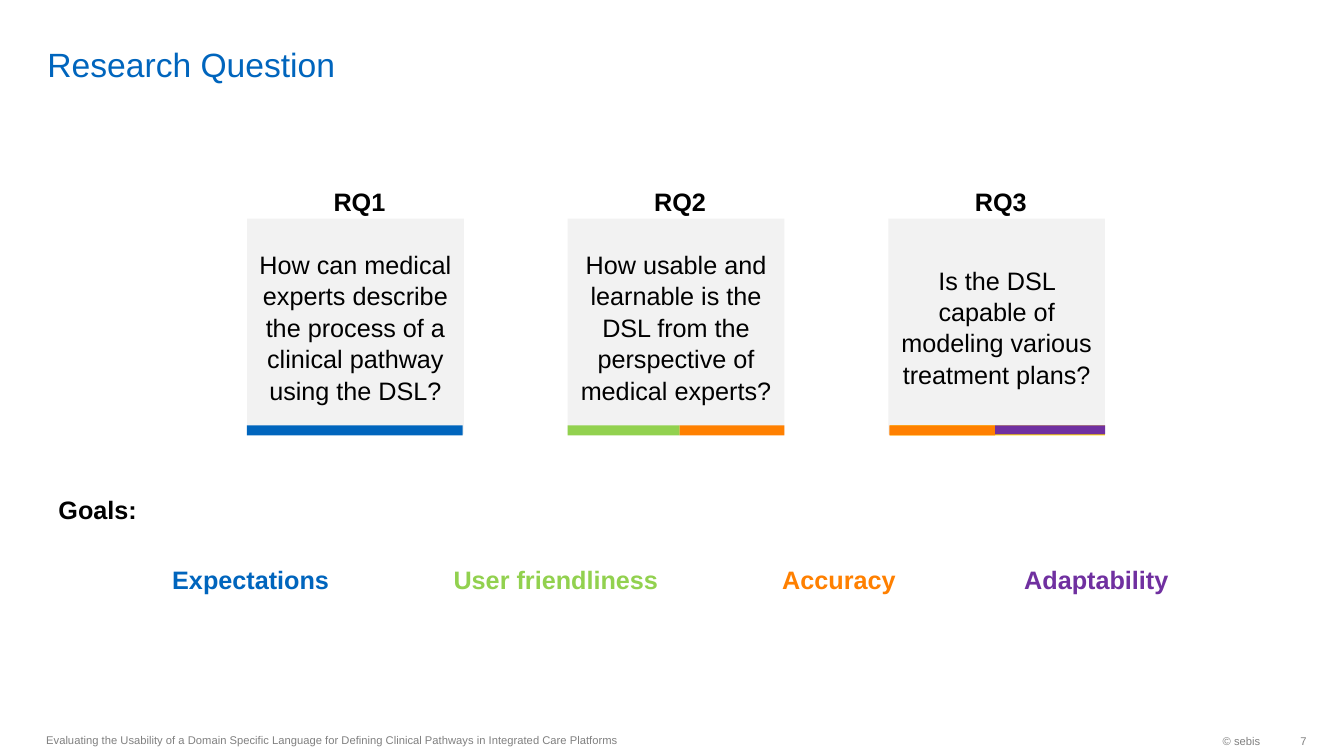
from pptx import Presentation
from pptx import util as u
from pptx.dml.color import RGBColor
from pptx.enum import shapes, text

PX = 9144
COLORS = {
    "blue": "0065BD",
    "green": "92D14F",
    "orange": "FF8000",
    "purple": "7030A0",
    "yellow": "FFDA00",
    "card": "F2F2F2",
    "black": "000000",
    "grey": "808080",
}
LEFT, CENTER, RIGHT = text.PP_ALIGN.LEFT, text.PP_ALIGN.CENTER, text.PP_ALIGN.RIGHT


def write(shape, content, size, color, bold=False, align=LEFT,
          anchor=text.MSO_ANCHOR.MIDDLE, insets=(10, 5, 10, 5), wrap=True):
    frame = shape.text_frame
    frame.word_wrap = wrap
    frame.auto_size = text.MSO_AUTO_SIZE.NONE
    frame.vertical_anchor = anchor
    frame.margin_left, frame.margin_top, frame.margin_right, frame.margin_bottom = [
        inset * PX for inset in insets]
    paragraph = frame.paragraphs[0]
    paragraph.alignment = align
    run = paragraph.add_run()
    run.text = content
    run.font.name = "Arial"
    run.font.size = u.Pt(size)
    run.font.bold = bold
    run.font.color.rgb = RGBColor.from_string(COLORS[color])
    return paragraph


def add_rectangle(left, top, width, height, color):
    shape = slide.shapes.add_shape(
        shapes.MSO_SHAPE.RECTANGLE, left * PX, top * PX, width * PX, height * PX)
    shape.shadow.inherit = False
    shape.fill.solid()
    shape.fill.fore_color.rgb = RGBColor.from_string(COLORS[color])
    shape.line.fill.background()
    return shape


presentation = Presentation()
presentation.slide_width = u.Inches(13.33)
presentation.slide_height = u.Inches(7.5)
slide = presentation.slides.add_slide(presentation.slide_layouts[5])

title = slide.shapes.title
title.left, title.top, title.width, title.height = [
    length * PX for length in (37, 5, 1158, 79)]
write(title, "Research Question", 24, "blue",
      anchor=text.MSO_ANCHOR.BOTTOM, insets=(10, 0, 10, 0))

footers = [
    (36, 718, 630, "Evaluating the Usability of a Domain Specific Language for "
     "Defining Clinical Pathways in Integrated Care Platforms", LEFT, 10),
    (1026, 719, 234, "© sebis", RIGHT, 10),
    (1260, 719, 36, "7", RIGHT, 0),
]
for left, top, width, content, align, right_inset in footers:
    footer = slide.shapes.add_textbox(left * PX, top * PX, width * PX, 32 * PX)
    write(footer, content, 8, "grey", align=align, insets=(10, 5, right_inset, 5))

questions = [
    ("How can medical experts describe the process of a clinical pathway using the DSL?",
     [(245, 214, 10, "blue")]),
    ("How usable and learnable is the DSL from the perspective of medical experts?",
     [(563, 111, 10, "green"), (674, 104, 10, "orange")]),
    ("Is the DSL capable of modeling various treatment plans?",
     [(883, 213, 10, "yellow"), (882, 105, 10, "orange"), (987, 109, 9, "purple")]),
]
for index, (question, goal_bars) in enumerate(questions):
    left = 245 + 318 * index
    card = add_rectangle(left, 217, 215, 214, "card")
    write(card, question, 18, "black", align=CENTER).line_spacing = 1.04
    for bar_left, bar_width, bar_height, color in goal_bars:
        add_rectangle(bar_left, 422, bar_width, bar_height, color)
    label = slide.shapes.add_textbox((left + 51) * PX, 180 * PX, 110 * PX, 40 * PX)
    write(label, f"RQ{index + 1}", 18, "black", bold=True, align=CENTER,
          insets=(21, 5, 10, 5))

heading = slide.shapes.add_textbox(37 * PX, 485 * PX, 1265 * PX, 40 * PX)
write(heading, "Goals:", 18, "black", bold=True, insets=(21, 5, 10, 5))

goals = [
    (161, 177, "Expectations", "blue"),
    (440, 225, "User friendliness", "green"),
    (766, 134, "Accuracy", "orange"),
    (1006, 165, "Adaptability", "purple"),
]
for left, width, goal, color in goals:
    goal_label = slide.shapes.add_textbox(left * PX, 555 * PX, width * PX, 40 * PX)
    write(goal_label, goal, 18, color, bold=True, wrap=False)

presentation.save("out.pptx")
